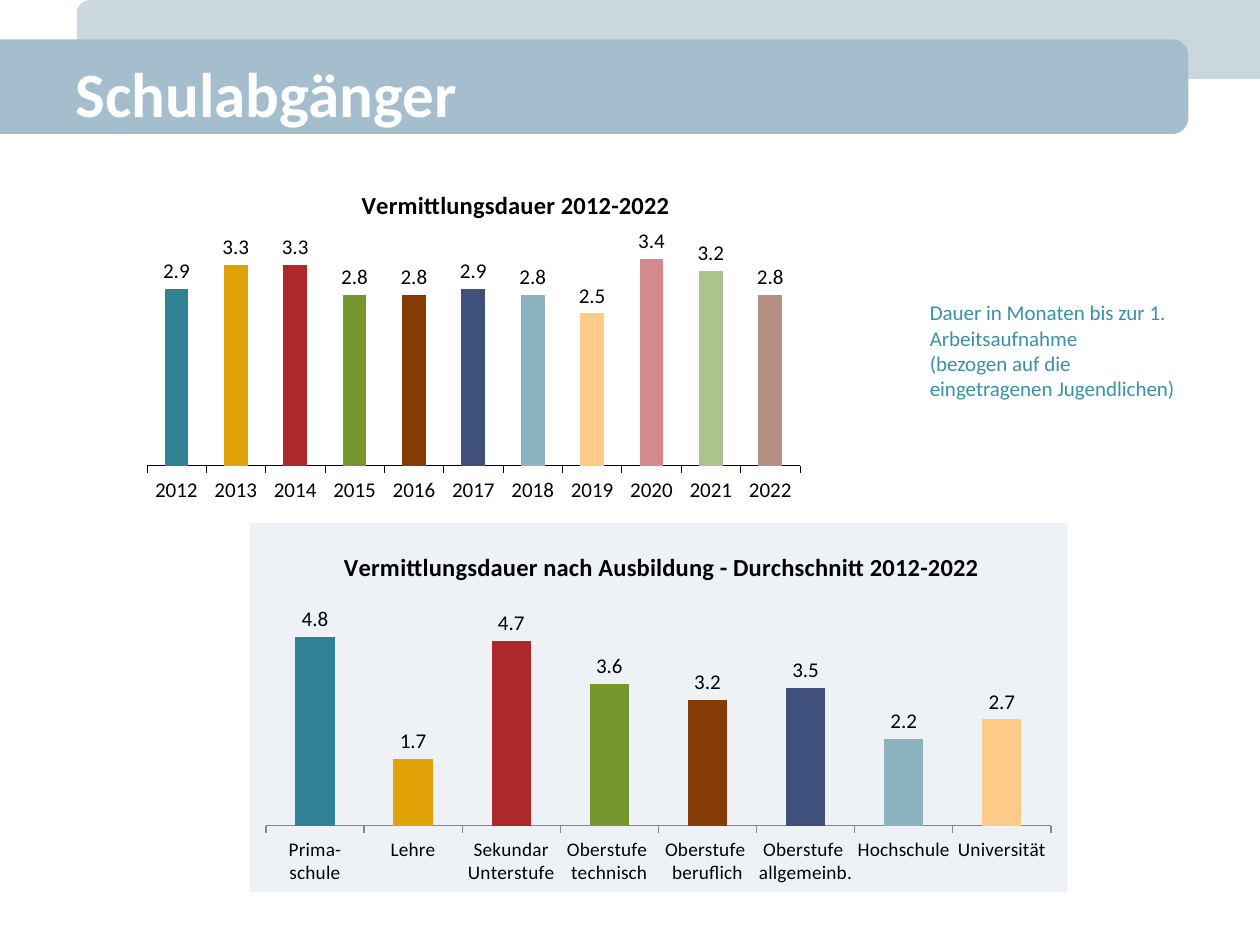
"""Build the slide on placement times of school leavers, with two column charts."""
from lxml import etree
from pptx import Presentation
from pptx.chart.data import CategoryChartData
from pptx.dml.color import RGBColor
from pptx.enum.chart import XL_CHART_TYPE, XL_LABEL_POSITION, XL_TICK_LABEL_POSITION, XL_TICK_MARK
from pptx.enum.shapes import MSO_SHAPE
from pptx.enum.text import MSO_ANCHOR, PP_ALIGN
from pptx.oxml import parse_xml
from pptx.oxml.ns import nsdecls, qn
from pptx.util import Pt

COLORS = {
    "back_band": "8BA8B8", "title_band": "A4BECD", "white": "FFFFFF",
    "black": "000000", "note": "3891A7", "panel": "D4DFEC", "axis": "868686",
}
BARS = ["318195", "E1A208", "AC2829", "75972D", "853B04", "3F507D",
        "8DB3C1", "FDCB87", "D38A8B", "ACC38E", "B69084"]
FONT = "Calibri"


def style(font, size, color, bold=False):
    font.name, font.size, font.bold = FONT, Pt(size), bold
    font.color.rgb = RGBColor.from_string(COLORS[color])


def layout(inner=False, **place):
    node = parse_xml(f"<c:layout {nsdecls('c')}><c:manualLayout/></c:layout>")
    tags = [("layoutTarget", "inner")] if inner else []
    tags += [("xMode", "edge"), ("yMode", "edge"), *place.items()]
    for tag, val in tags:
        etree.SubElement(node[0], qn(f"c:{tag}")).set("val", str(val))
    return node


prs = Presentation()
prs.slide_width, prs.slide_height = Pt(720), Pt(540)
s = prs.slides.add_slide(prs.slide_layouts[5])

bands = [
    (382, 22.5, 45, 676, 270, "back_band", 45),
    (339.5, 49.5, 54, 679, 90, "title_band", 100),
]
for cx, cy, w, h, turn, color, alpha in bands:
    sp = s.shapes.add_shape(MSO_SHAPE.ROUND_2_SAME_RECTANGLE,
                            Pt(cx - w / 2), Pt(cy - h / 2), Pt(w), Pt(h))
    sp.rotation = turn
    sp.shadow.inherit = False
    sp.line.fill.background()
    sp.fill.solid()
    sp.fill.fore_color.rgb = RGBColor.from_string(COLORS[color])
    rgb = sp.element.spPr.find(f"{qn('a:solidFill')}/{qn('a:srgbClr')}")
    etree.SubElement(rgb, qn("a:alpha")).set("val", str(alpha * 1000))

title = s.shapes.title
title.element.getparent().append(title.element)
title.left, title.top, title.width, title.height = Pt(36), Pt(21.6), Pt(648), Pt(62.6)
tf = title.text_frame
tf.vertical_anchor = MSO_ANCHOR.MIDDLE
p = tf.paragraphs[0]
p.alignment = PP_ALIGN.LEFT
r = p.add_run()
r.text = "Schulabgänger"
style(r.font, 36, "white", True)

tf = s.shapes.add_textbox(Pt(524.2), Pt(167.8), Pt(164.2), Pt(65.5)).text_frame
tf.word_wrap = True
notes = ["Dauer in Monaten bis zur 1. Arbeitsaufnahme",
         "(bezogen auf die eingetragenen Jugendlichen)"]
for i, text in enumerate(notes):
    p = tf.add_paragraph() if i else tf.paragraphs[0]
    r = p.add_run()
    r.text = text
    style(r.font, 12, "note")

charts = [
    dict(title="Vermittlungsdauer 2012-2022", box=(65.5, 92.9, 407.5, 198),
         cats=[str(year) for year in range(2012, 2023)],
         vals=[2.9, 3.3, 3.3, 2.8, 2.8, 2.9, 2.8, 2.5, 3.4, 3.2, 2.8],
         top=4, size=12, line="black", weight=0.25, fill="white", alpha=100,
         head=dict(x=0.34, y=0.06), plot=dict(x=0.045, y=0.172, w=0.916, h=0.703)),
    dict(title="Vermittlungsdauer nach Ausbildung - Durchschnitt 2012-2022",
         box=(142.6, 298.8, 467.3, 211),
         cats=["Prima-\nschule", "Lehre", "Sekundar\nUnterstufe", "Oberstufe \ntechnisch",
               "Oberstufe \nberuflich", "Oberstufe \nallgemeinb.", "Hochschule", "Universität"],
         vals=[4.8, 1.7, 4.7, 3.6, 3.2, 3.5, 2.2, 2.7],
         top=6, size=11, line="axis", weight=0.75, fill="panel", alpha=39,
         head=dict(x=0.11, y=0.06), plot=dict(x=0.02, y=0.18, w=0.96, h=0.64)),
]
for c in charts:
    data = CategoryChartData(number_format="0.0")
    data.categories = c["cats"]
    data.add_series("Vermittlungsdauer", c["vals"])
    chart = s.shapes.add_chart(XL_CHART_TYPE.COLUMN_CLUSTERED,
                               *[Pt(v) for v in c["box"]], data).chart
    style(chart.font, 12, "black")
    chart.has_legend = False
    chart.has_title = True
    r = chart.chart_title.text_frame.paragraphs[0].add_run()
    r.text = c["title"]
    style(r.font, 14, "black", True)

    for area, node in ((chart.chart_title.element, layout(**c["head"])),
                       (chart.element.find(f".//{qn('c:plotArea')}"),
                        layout(inner=True, **c["plot"]))):
        for old in area.findall(qn("c:layout")):
            area.remove(old)
        tx = area.find(qn("c:tx"))
        area.insert(0 if tx is None else 1, node)
    chart.element.find(qn("c:chart")).addnext(parse_xml(
        f"<c:spPr {nsdecls('c', 'a')}><a:solidFill><a:srgbClr val=\"{COLORS[c['fill']]}\">"
        f"<a:alpha val=\"{c['alpha'] * 1000}\"/></a:srgbClr></a:solidFill>"
        "<a:ln><a:noFill/></a:ln></c:spPr>"))

    axis = chart.value_axis
    axis.visible = axis.has_major_gridlines = False
    axis.minimum_scale, axis.maximum_scale = 0, c["top"]
    axis = chart.category_axis
    axis.major_tick_mark = XL_TICK_MARK.OUTSIDE
    axis.tick_label_position = XL_TICK_LABEL_POSITION.LOW
    axis.format.line.color.rgb = RGBColor.from_string(COLORS[c["line"]])
    axis.format.line.width = Pt(c["weight"])
    style(axis.tick_labels.font, c["size"], "black")

    plot = chart.plots[0]
    plot.gap_width = 150
    plot.vary_by_categories = False
    plot.has_data_labels = True
    labels = plot.data_labels
    labels.show_value = True
    labels.number_format, labels.number_format_is_linked = "0.0", False
    labels.position = XL_LABEL_POSITION.OUTSIDE_END
    style(labels.font, 12, "black")
    for i in range(len(c["vals"])):
        fill = plot.series[0].points[i].format.fill
        fill.solid()
        fill.fore_color.rgb = RGBColor.from_string(BARS[i])

prs.save("out.pptx")
